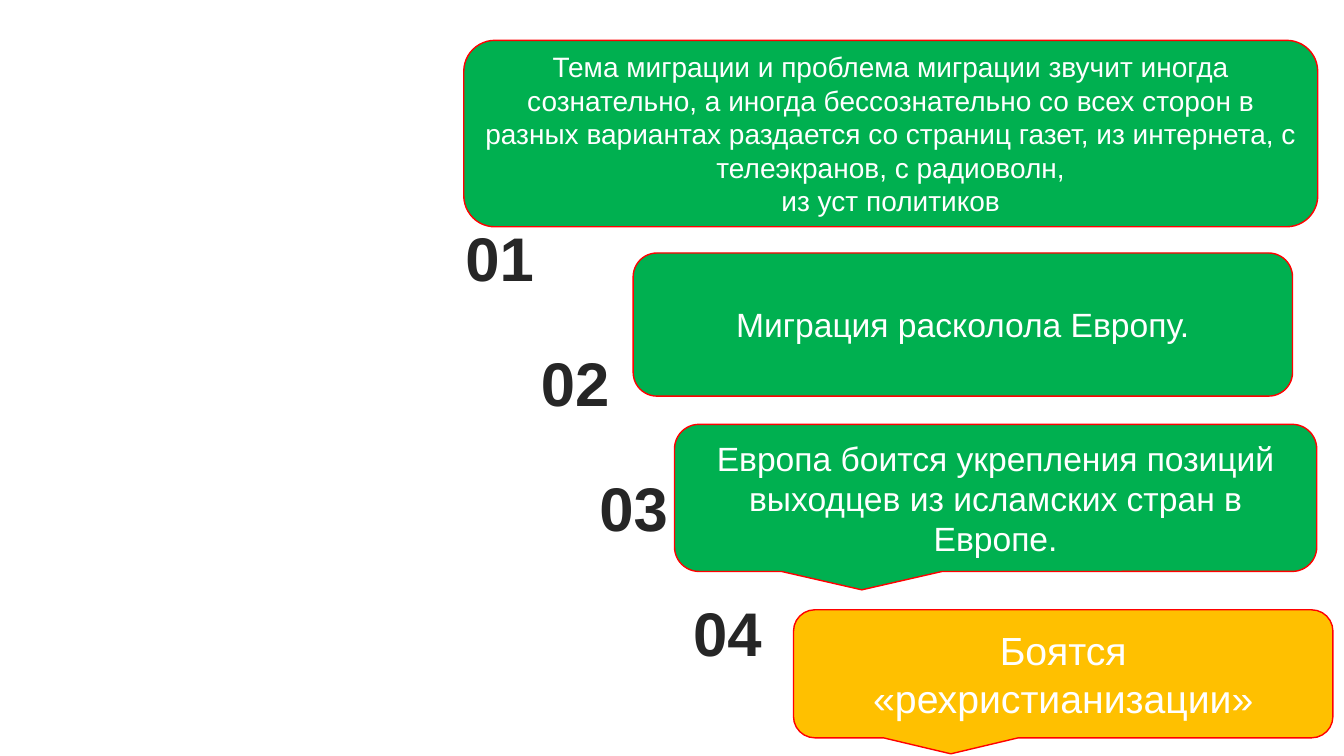
"""Build a slide with four numbered theses on migration in Europe."""
from dataclasses import dataclass

from pptx import Presentation
from pptx import util as u
from pptx.dml.color import RGBColor
from pptx.enum import shapes, text

EMU_PER_PX = 9144
SLIDE_WIDTH, SLIDE_HEIGHT = 1333, 750
NUMBER_TOP, NUMBER_STEP, NUMBER_HEIGHT = 213, 124, 84
ROUNDED = shapes.MSO_SHAPE.ROUNDED_RECTANGLE
CALLOUT = shapes.MSO_SHAPE.ROUNDED_RECTANGULAR_CALLOUT


@dataclass(frozen=True)
class Theme:
    font: str = "Arial"
    number: str = "262626"
    thesis: str = "FFFFFF"
    outline: str = "FF0000"
    green: str = "00B050"
    amber: str = "FFC000"
    number_size: int = 44
    small: int = 20
    medium: int = 24
    large: int = 28
    outline_width: int = 1


@dataclass(frozen=True)
class Number:
    left: int
    width: int


@dataclass(frozen=True)
class Thesis:
    left: int
    top: int
    width: int
    height: int
    outline: shapes.MSO_SHAPE
    fill: str
    size: int
    lines: tuple[str, ...]


THEME = Theme()

NUMBERS = (Number(443, 105), Number(518, 105), Number(558, 141), Number(669, 105))

THESES = (
    Thesis(460, 40, 847, 185, ROUNDED, THEME.green, THEME.small, (
        "Тема миграции и проблема миграции звучит иногда сознательно, "
        "а иногда бессознательно со всех сторон в разных вариантах раздается "
        "со страниц газет, из интернета, с телеэкранов, с радиоволн,",
        "из уст политиков",
    )),
    Thesis(628, 251, 654, 142, ROUNDED, THEME.green, THEME.medium,
           ("Миграция расколола Европу.",)),
    Thesis(669, 421, 637, 146, CALLOUT, THEME.green, THEME.medium,
           ("Европа боится укрепления позиций выходцев из исламских стран в Европе.",)),
    Thesis(787, 605, 535, 127, CALLOUT, THEME.amber, THEME.large,
           ("Боятся «рехристианизации»",)),
)


def px(*lengths: int) -> list[u.Emu]:
    return [u.Emu(length * EMU_PER_PX) for length in lengths]


def write(frame, lines: tuple[str, ...], size: int, color: str, bold: bool = False) -> None:
    frame.word_wrap = True
    frame.text = "\n".join(lines)
    for paragraph in frame.paragraphs:
        paragraph.alignment = text.PP_ALIGN.CENTER
        paragraph.font.name = THEME.font
        paragraph.font.size = u.Pt(size)
        paragraph.font.bold = bold
        paragraph.font.color.rgb = RGBColor.from_string(color)


def draw_number(slide, index: int, number: Number) -> None:
    top = NUMBER_TOP + index * NUMBER_STEP
    label = slide.shapes.add_textbox(*px(number.left, top, number.width, NUMBER_HEIGHT))
    frame = label.text_frame
    frame.margin_left, frame.margin_right = px(12, 12)
    write(frame, (f"{index + 1:02}",), THEME.number_size, THEME.number, bold=True)


def draw_thesis(slide, thesis: Thesis) -> None:
    panel = slide.shapes.add_shape(
        thesis.outline, *px(thesis.left, thesis.top, thesis.width, thesis.height))
    panel.shadow.inherit = False
    panel.fill.solid()
    panel.fill.fore_color.rgb = RGBColor.from_string(thesis.fill)
    panel.line.color.rgb = RGBColor.from_string(THEME.outline)
    panel.line.width = u.Pt(THEME.outline_width)
    panel.text_frame.vertical_anchor = text.MSO_ANCHOR.MIDDLE
    write(panel.text_frame, thesis.lines, thesis.size, THEME.thesis)


def main() -> None:
    deck = Presentation()
    deck.slide_width, deck.slide_height = px(SLIDE_WIDTH, SLIDE_HEIGHT)
    slide = deck.slides.add_slide(deck.slide_layouts[6])
    for index, number in enumerate(NUMBERS):
        draw_number(slide, index, number)
    for thesis in THESES:
        draw_thesis(slide, thesis)
    deck.save("out.pptx")


if __name__ == "__main__":
    main()
